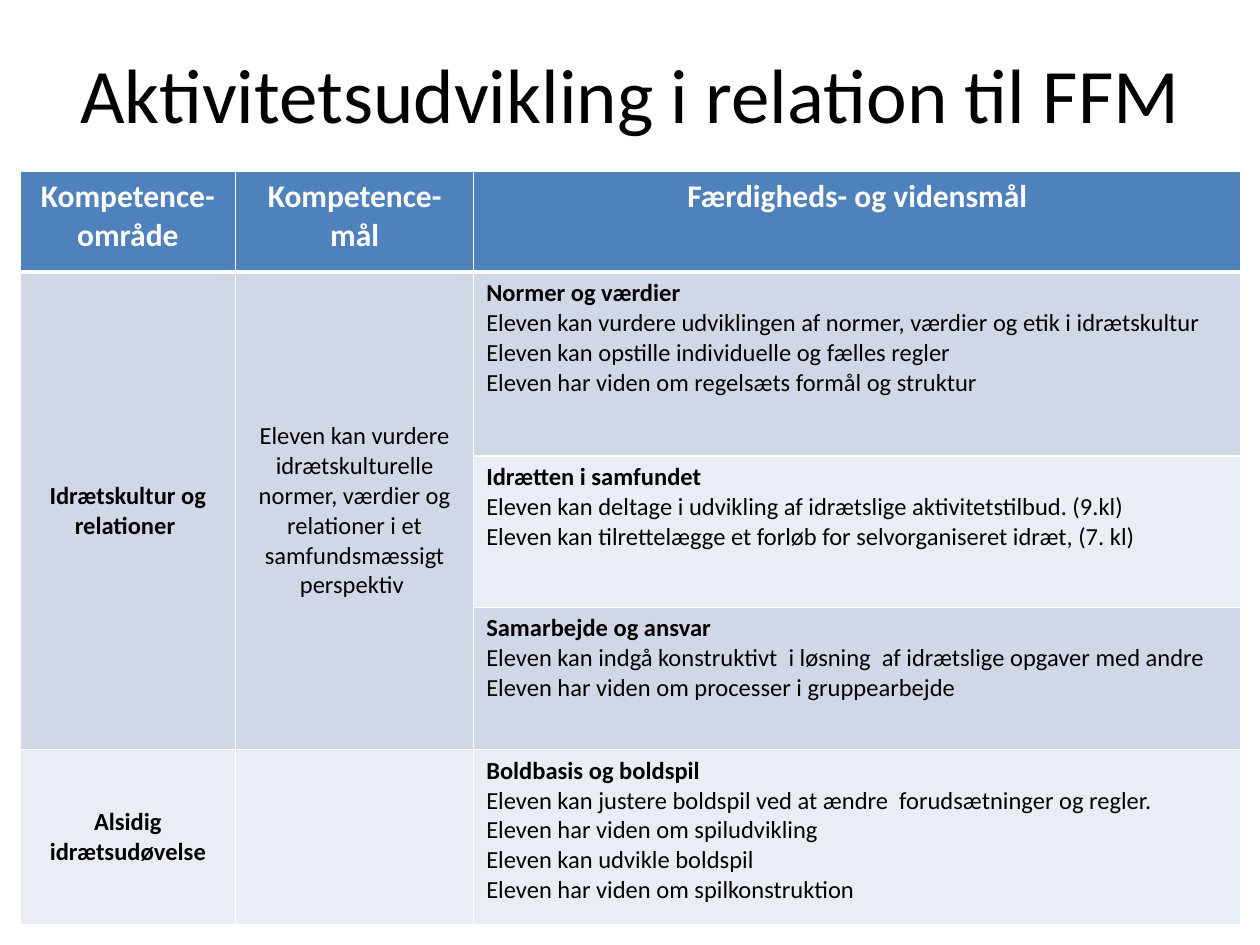
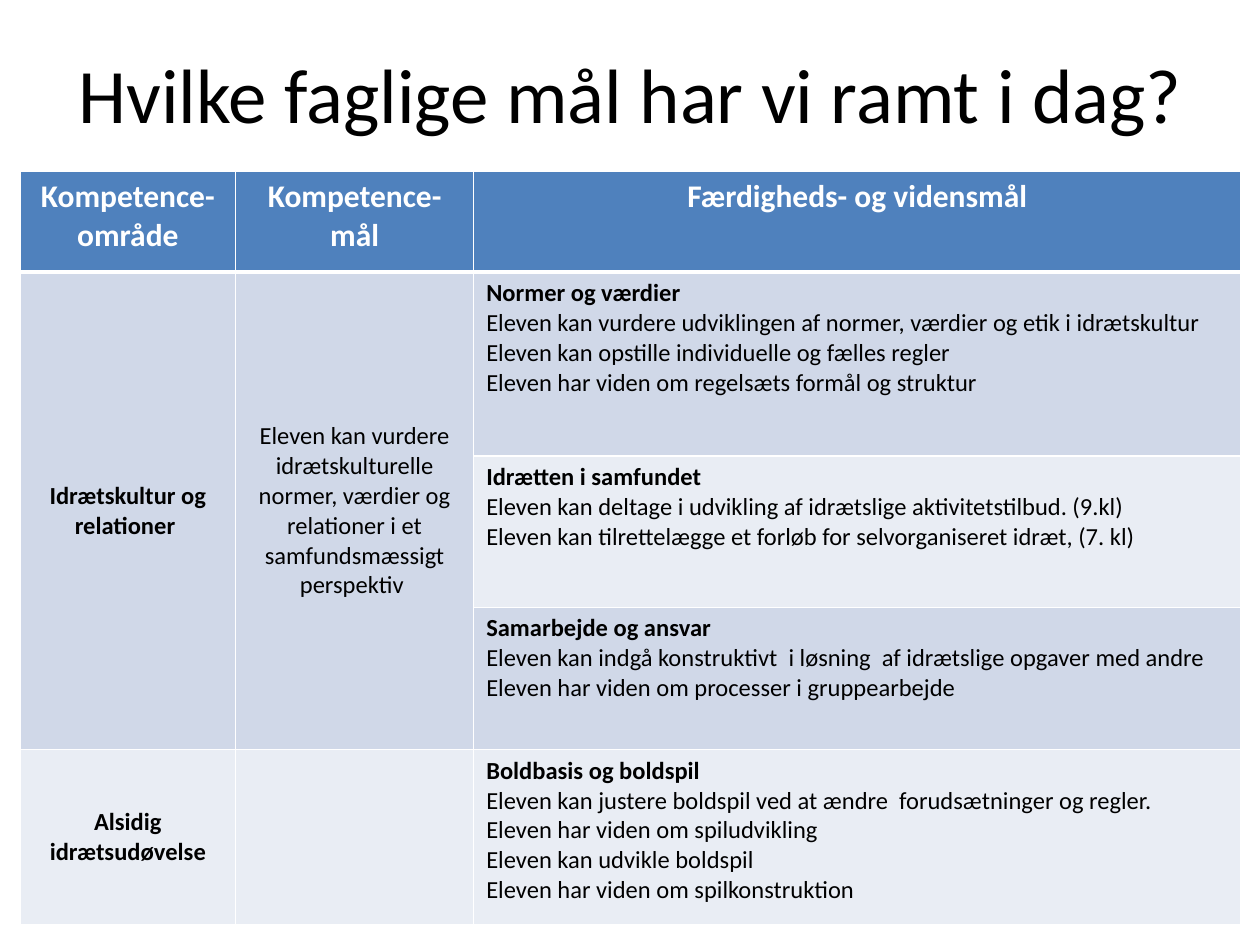
from dataclasses import dataclass

from lxml.etree import SubElement
from pptx import Presentation
from pptx.dml.color import RGBColor
from pptx.enum.text import MSO_ANCHOR as Anchor, PP_ALIGN as Align
from pptx.oxml.ns import qn
from pptx.util import Inches, Pt

FONT = "Calibri"
BLACK = RGBColor(0x00, 0x00, 0x00)
WHITE = RGBColor(0xFF, 0xFF, 0xFF)
HEADER_BLUE = RGBColor(0x4F, 0x81, 0xBD)
BAND_DARK = RGBColor(0xD0, 0xD8, 0xE8)
BAND_LIGHT = RGBColor(0xE9, 0xED, 0xF4)

LEFT, WIDTH = Inches(0.16), Inches(9.69)
TITLE_TOP, TABLE_TOP = Inches(0.11), Inches(1.36)
COL_WIDTHS = [Inches(w) for w in (1.71, 1.89, 6.09)]
ROW_HEIGHTS = [Inches(h) for h in (0.8, 1.46, 1.2, 1.13, 1.39)]
THIN, THICK = Pt(1), Pt(3)

TITLES = ("Aktivitetsudvikling i relation til FFM", "Hvilke faglige mål har vi ramt i dag?")
HEADERS = ("Kompetence-område", "Kompetence-mål", "Færdigheds- og vidensmål")


@dataclass(frozen=True)
class Style:
    size: int
    color: RGBColor = BLACK
    bold: bool = False
    align: Align = Align.LEFT
    anchor: Anchor = Anchor.TOP


@dataclass(frozen=True)
class Goal:
    heading: str
    lines: tuple[str, ...]


@dataclass(frozen=True)
class Area:
    name: str
    competence: str
    goals: tuple[Goal, ...]


TITLE = Style(44, align=Align.CENTER, anchor=Anchor.MIDDLE)
HEADER = Style(18, WHITE, True, Align.CENTER)
AREA = Style(14, bold=True, align=Align.CENTER, anchor=Anchor.MIDDLE)
COMPETENCE = Style(14, align=Align.CENTER, anchor=Anchor.MIDDLE)
GOAL_HEADING = Style(14, bold=True)
GOAL_LINE = Style(14)

AREAS = (
    Area(
        "Idrætskultur og relationer ",
        "Eleven kan vurdere idrætskulturelle normer, værdier og relationer "
        "i et samfundsmæssigt perspektiv ",
        (
            Goal("Normer og værdier", (
                "Eleven kan vurdere udviklingen af normer, værdier og etik i idrætskultur",
                "Eleven kan opstille individuelle og fælles regler",
                "Eleven har viden om regelsæts formål og struktur",
            )),
            Goal("Idrætten i samfundet", (
                "Eleven kan deltage i udvikling af idrætslige aktivitetstilbud. (9.kl)",
                "Eleven kan tilrettelægge et forløb for selvorganiseret idræt, (7. kl)",
            )),
            Goal("Samarbejde og ansvar", (
                "Eleven kan indgå konstruktivt  i løsning  af idrætslige opgaver med andre",
                "Eleven har viden om processer i gruppearbejde",
            )),
        ),
    ),
    Area("Alsidig idrætsudøvelse", "", (
        Goal("Boldbasis og boldspil", (
            "Eleven kan justere boldspil ved at ændre  forudsætninger og regler.",
            "Eleven har viden om spiludvikling",
            "Eleven kan udvikle boldspil",
            "Eleven har viden om spilkonstruktion",
        )),
    )),
)


def write(tf, paragraphs: list[tuple[str, Style]]) -> None:
    """Fill a text frame with one styled run per paragraph."""
    for i, (text, style) in enumerate(paragraphs):
        p = tf.add_paragraph() if i else tf.paragraphs[0]
        p.alignment = style.align
        r = p.add_run()
        r.text = text
        r.font.name = FONT
        r.font.size = Pt(style.size)
        r.font.bold = style.bold
        r.font.color.rgb = style.color


def write_cell(cell, *paragraphs: tuple[str, Style]) -> None:
    """Write text in a table cell and anchor it by its first style."""
    write(cell.text_frame, list(paragraphs))
    cell.vertical_anchor = paragraphs[0][1].anchor


def paint_cell(cell, row: int) -> None:
    """Give a cell white borders and the fill of its row."""
    tc_pr = cell._tc.get_or_add_tcPr()
    top = THICK if row == 1 else THIN
    bottom = THICK if row == 0 else THIN
    for side, width in (("L", THIN), ("R", THIN), ("T", top), ("B", bottom)):
        ln = SubElement(tc_pr, qn(f"a:ln{side}"), w=str(width))
        fill = SubElement(ln, qn("a:solidFill"))
        SubElement(fill, qn("a:srgbClr"), val=str(WHITE))
    cell.fill.solid()
    band = BAND_DARK if row % 2 else BAND_LIGHT
    cell.fill.fore_color.rgb = band if row else HEADER_BLUE


def add_title(s, text: str) -> None:
    """Add the centred slide title."""
    tf = s.shapes.add_textbox(LEFT, TITLE_TOP, WIDTH, TABLE_TOP - TITLE_TOP).text_frame
    tf.word_wrap = True
    tf.vertical_anchor = TITLE.anchor
    write(tf, [(text, TITLE)])


def add_goal_table(s) -> None:
    """Add the table of areas, competences and goals."""
    table = s.shapes.add_table(
        len(ROW_HEIGHTS), len(COL_WIDTHS), LEFT, TABLE_TOP, WIDTH, sum(ROW_HEIGHTS)
    ).table
    for column, width in zip(table.columns, COL_WIDTHS):
        column.width = width
    for i, height in enumerate(ROW_HEIGHTS):
        table.rows[i].height = height
        for j in range(len(COL_WIDTHS)):
            paint_cell(table.cell(i, j), i)

    for j, text in enumerate(HEADERS):
        write_cell(table.cell(0, j), (text, HEADER))

    row = 1
    for area in AREAS:
        last = row + len(area.goals) - 1
        for j, (text, style) in enumerate(((area.name, AREA), (area.competence, COMPETENCE))):
            cell = table.cell(row, j)
            if last > row:
                cell.merge(table.cell(last, j))
            if text:
                write_cell(cell, (text, style))
        for i, goal in enumerate(area.goals, row):
            lines = [(line, GOAL_LINE) for line in goal.lines]
            write_cell(table.cell(i, 2), (goal.heading, GOAL_HEADING), *lines)
        row = last + 1


def main() -> None:
    """Build the presentation."""
    prs = Presentation()
    prs.slide_width, prs.slide_height = Inches(10), Inches(7.5)
    for title in TITLES:
        s = prs.slides.add_slide(prs.slide_layouts[6])
        add_title(s, title)
        add_goal_table(s)
    prs.save("out.pptx")


if __name__ == "__main__":
    main()
